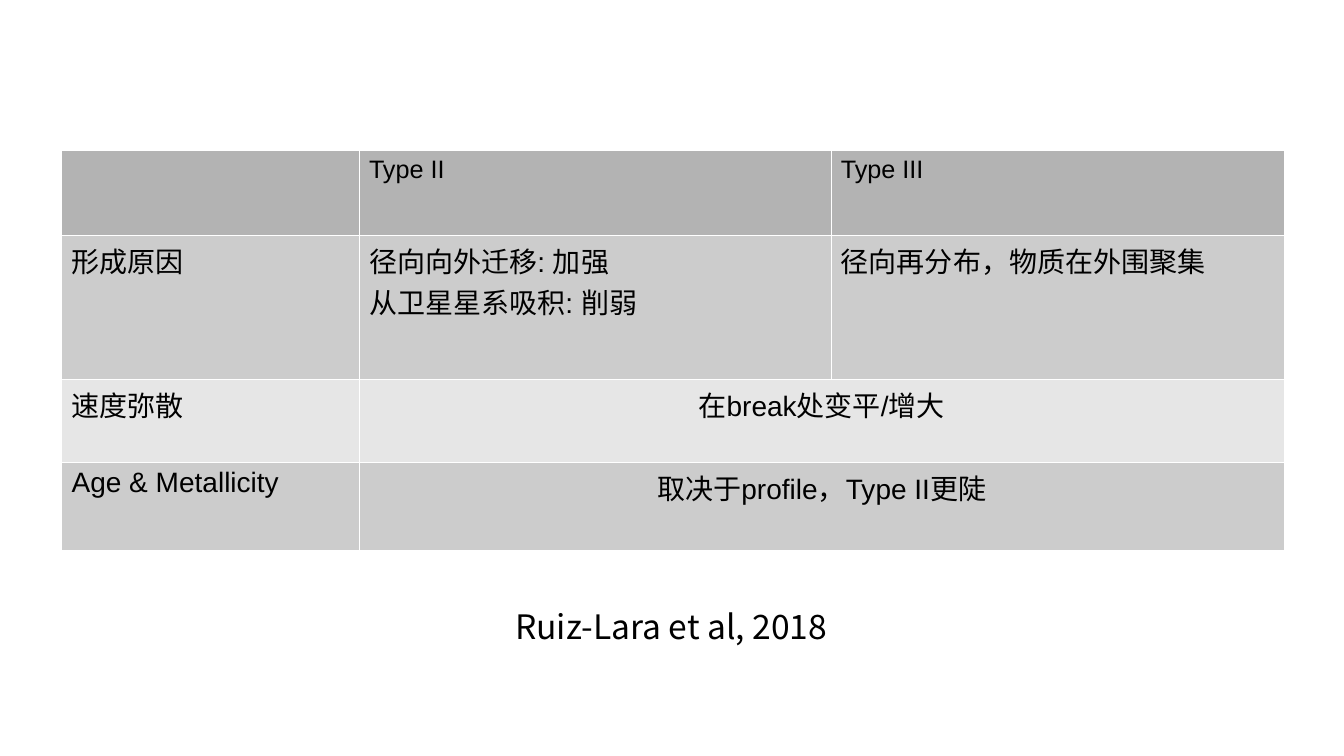
import pptx
import pptx.dml.color
import pptx.enum.text
import pptx.oxml
import pptx.oxml.ns
import pptx.util
from pptx.util import Inches

COLORS = {"ink": "000000", "rule": "FFFFFF", "header": "B3B3B3",
          "dark": "CCCCCC", "light": "E6E6E6"}
LATIN, CHINESE = "Arial", "Noto Sans CJK SC"
RULE_WIDTH = pptx.util.Pt(0.06)
LEFT = pptx.enum.text.PP_ALIGN.LEFT
CENTER = pptx.enum.text.PP_ALIGN.CENTER


def rgb(color):
    return pptx.dml.color.RGBColor.from_string(COLORS[color])


class SlideBuilder:
    def __init__(self, slide):
        self.slide = slide

    def set_text(self, frame, text, size, font=LATIN, align=LEFT):
        frame.text = text
        for paragraph in frame.paragraphs:
            paragraph.alignment = align
            for run in paragraph.runs:
                for key, value in {"size": pptx.util.Pt(size), "name": font}.items():
                    setattr(run.font, key, value)
                run.font.color.rgb = rgb("ink")
                east_asian = pptx.oxml.parse_xml(
                    f'<a:ea {pptx.oxml.ns.nsdecls("a")} typeface="{CHINESE}"/>')
                run._r.get_or_add_rPr().append(east_asian)

    def style_cell(self, cell, color):
        properties = cell._tc.get_or_add_tcPr()
        for side in ("lnL", "lnR", "lnT", "lnB"):
            properties.append(pptx.oxml.parse_xml(
                f'<a:{side} {pptx.oxml.ns.nsdecls("a")} w="{RULE_WIDTH}"><a:solidFill>'
                f'<a:srgbClr val="{COLORS["rule"]}"/></a:solidFill></a:{side}>'))
        cell.fill.solid()
        cell.fill.fore_color.rgb = rgb(color)

    def table(self, left, top, widths, heights, rows):
        grid = self.slide.shapes.add_table(
            len(heights), len(widths), Inches(left), Inches(top),
            Inches(sum(widths)), Inches(sum(heights))).table
        for column, width in zip(grid.columns, widths):
            column.width = Inches(width)
        for row, height in zip(grid.rows, heights):
            row.height = Inches(height)
        for r, (color, size, texts) in enumerate(rows):
            for c in range(len(widths)):
                self.style_cell(grid.cell(r, c), color)
            merged = len(texts) < len(widths)
            if merged:
                grid.cell(r, 1).merge(grid.cell(r, len(widths) - 1))
            for c, text in enumerate(texts):
                if text:
                    align = CENTER if merged and c else LEFT
                    self.set_text(grid.cell(r, c).text_frame, text, size, align=align)

    def caption(self, left, top, width, height, text, size):
        frame = self.slide.shapes.add_textbox(
            Inches(left), Inches(top), Inches(width), Inches(height)).text_frame
        frame.word_wrap = True
        self.set_text(frame, text, size, font=CHINESE)


def main():
    deck = pptx.Presentation()
    deck.slide_width, deck.slide_height = Inches(13.33), Inches(7.5)
    builder = SlideBuilder(deck.slides.add_slide(deck.slide_layouts[6]))
    comparison = [
        ("header", 18, ["", "Type II", "Type III"]),
        ("dark", 20, ["形成原因", "径向向外迁移: 加强\n从卫星星系吸积: 削弱",
                      "径向再分布，物质在外围聚集"]),
        ("light", 20, ["速度弥散", "在break处变平/增大"]),
        ("dark", 20, ["Age & Metallicity", "取决于profile，Type II更陡"]),
    ]
    builder.table(0.61, 1.49, [2.95, 4.68, 4.5], [0.84, 1.43, 0.82, 0.88], comparison)
    builder.caption(5.01, 5.96, 7.32, 0.8, "Ruiz-Lara et al, 2018", 24)
    deck.save("out.pptx")


if __name__ == "__main__":
    main()
